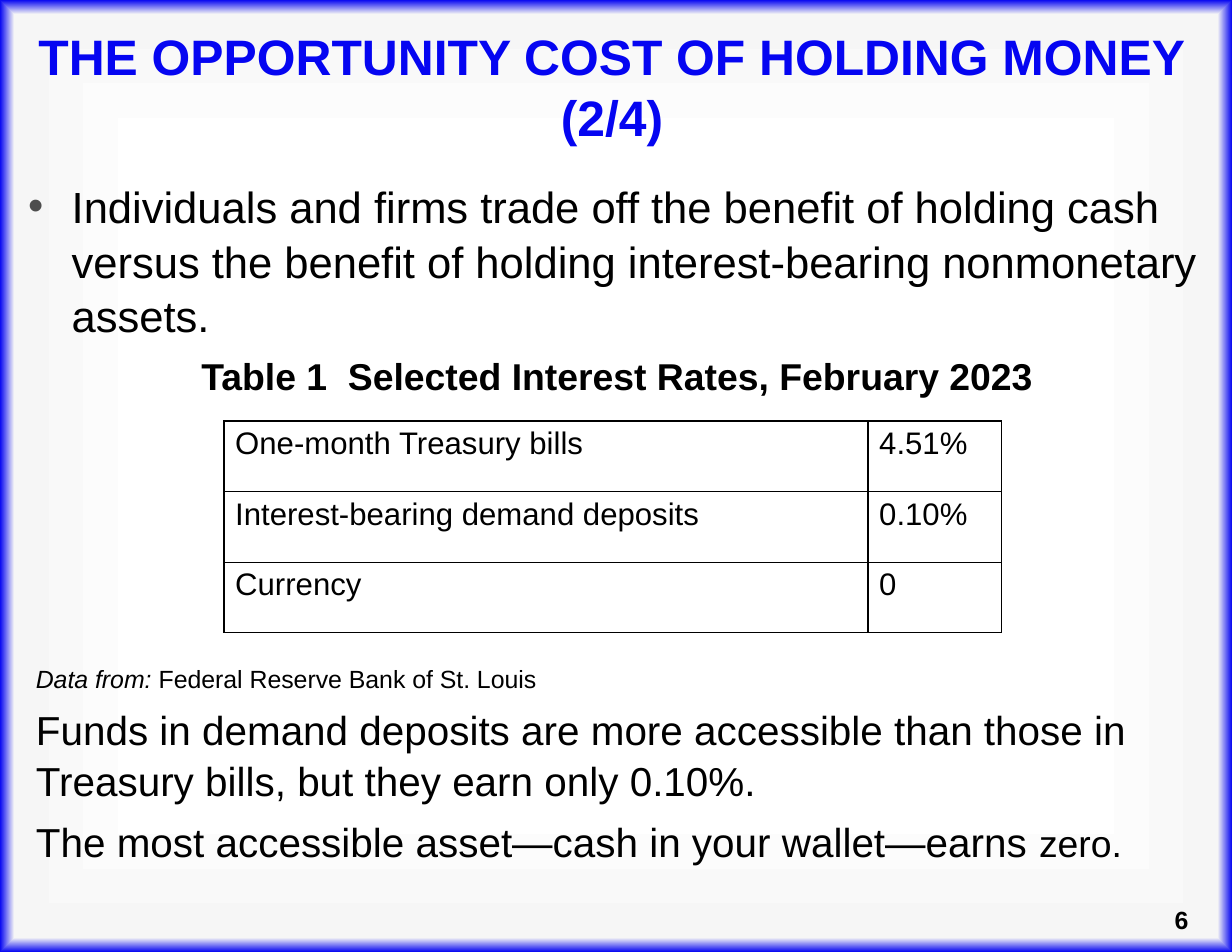
from dataclasses import dataclass

from pptx import Presentation
from pptx.dml.color import RGBColor as RGB
from pptx.enum.text import MSO_ANCHOR as Anchor, MSO_AUTO_SIZE as AutoSize, PP_ALIGN as Align
from pptx.oxml import parse_xml
from pptx.oxml.ns import nsdecls
from pptx.util import Inches, Pt


@dataclass(frozen=True)
class Theme:
    font: str = "Arial"
    accent: str = "0505F1"
    ink: str = "000000"
    bullet: str = "4E4E4E"
    paper: str = "FFFFFF"
    rim: str = "F6F6F6"
    title: int = 32
    lead: int = 28
    body: int = 26
    caption: int = 24
    table: int = 20
    small: int = 16
    space_before: float = 6.2


THEME = Theme()
RATES = [
    ("One-month Treasury bills", "4.51%"),
    ("Interest-bearing demand deposits", "0.10%"),
    ("Currency", "0"),
]
COLUMN_WIDTHS = (5.75, 1.19)
ROW_HEIGHT = 0.63


def paint_background(page):
    """Fade from a white centre to a blue frame at the slide edge."""
    stops = "".join(
        f'<a:gs pos="{share * 1000}"><a:srgbClr val="{color}"/></a:gs>'
        for share, color in ((68, THEME.paper), (97, THEME.rim), (100, THEME.accent))
    )
    page.element.cSld.insert(0, parse_xml(
        f'<p:bg {nsdecls("p", "a")}><p:bgPr><a:gradFill rotWithShape="1">'
        f'<a:gsLst>{stops}</a:gsLst><a:path path="shape">'
        '<a:fillToRect l="50000" t="50000" r="50000" b="50000"/></a:path>'
        '</a:gradFill><a:effectLst/></p:bgPr></p:bg>'
    ))


def place(box, left, top, width, height):
    sides = {"left": left, "top": top, "width": width, "height": height}
    for name, value in sides.items():
        setattr(box, name, Inches(value))


def add_span(para, text, size, color=THEME.ink, **style):
    span = para.add_run()
    span.text = text
    formats = {"name": THEME.font, "size": Pt(size), "bold": False, "italic": False} | style
    for name, value in formats.items():
        setattr(span.font, name, value)
    span.font.color.rgb = RGB.from_string(color)


def set_bullet(para, symbol=None, indent=0):
    properties = para._p.get_or_add_pPr()
    properties.set("marL", str(Inches(indent)))
    properties.set("indent", str(-Inches(indent)))
    if symbol:
        properties.append(parse_xml(
            f'<a:buClr {nsdecls("a")}><a:srgbClr val="{THEME.bullet}"/></a:buClr>'))
        properties.append(parse_xml(f'<a:buChar {nsdecls("a")} char="{symbol}"/>'))
    else:
        properties.append(parse_xml(f'<a:buNone {nsdecls("a")}/>'))


def fill_placeholder(box, bounds, count, line_spacing):
    """Place the box and return its formatted, still empty paragraphs."""
    place(box, *bounds)
    frame = box.text_frame
    frame_formats = {"word_wrap": True, "auto_size": AutoSize.NONE,
                     "vertical_anchor": Anchor.TOP, "margin_top": 0}
    for name, value in frame_formats.items():
        setattr(frame, name, value)
    for _ in range(count - 1):
        frame.add_paragraph()
    for para in frame.paragraphs:
        para.space_before = Pt(THEME.space_before)
        para.line_spacing = line_spacing
        para.alignment = Align.LEFT
    return frame.paragraphs


def add_title(page):
    [para] = fill_placeholder(page.shapes.title, (0, 0.21, 10.93, 1.08), 1, 1.03)
    para.alignment = Align.CENTER
    add_span(para, "THE OPPORTUNITY COST OF HOLDING MONEY (2/4)",
             THEME.title, THEME.accent, bold=True)


def add_lead(page):
    lead, caption = fill_placeholder(page.placeholders[1], (0.15, 1.58, 10.72, 2.21), 2, 1.05)
    set_bullet(lead, "•", 0.39)
    add_span(lead, "Individuals and firms trade off the benefit of holding cash versus "
                   "the benefit of holding interest-bearing nonmonetary assets.", THEME.lead)
    set_bullet(caption)
    caption.alignment = Align.CENTER
    add_span(caption, "Table 1\u00a0 Selected Interest Rates, February 2023".replace("\u00a0", " "),
             THEME.caption, bold=True)


def add_conclusions(page):
    paras = fill_placeholder(page.placeholders[2], (0.22, 5.91, 10.58, 2.09), 3, 1.05)
    for para in paras:
        set_bullet(para)
    credit, deposits, cash = paras
    add_span(credit, "Data from: ", THEME.small, italic=True)
    add_span(credit, "Federal Reserve Bank of St. Louis", THEME.small)
    add_span(deposits, "Funds in demand deposits are more accessible than those in "
                       "Treasury bills, but they earn only 0.10%.", THEME.body)
    add_span(cash, "The most accessible asset—cash in your wallet—earns", THEME.body)
    add_span(cash, " zero.", THEME.caption)


def outline_cell(cell):
    properties = cell._tc.get_or_add_tcPr()
    for position, side in enumerate(("lnL", "lnR", "lnT", "lnB")):
        properties.insert(position, parse_xml(
            f'<a:{side} {nsdecls("a")} w="{Pt(1)}"><a:solidFill>'
            f'<a:srgbClr val="{THEME.ink}"/></a:solidFill></a:{side}>'))


def add_rates_table(page):
    bounds = (2, 3.76, sum(COLUMN_WIDTHS), ROW_HEIGHT * len(RATES))
    table = page.shapes.add_table(len(RATES), len(COLUMN_WIDTHS), *map(Inches, bounds)).table
    table.first_row = table.horz_banding = False
    for column, width in zip(table.columns, COLUMN_WIDTHS):
        column.width = Inches(width)
    for row, values in zip(table.rows, RATES):
        row.height = Inches(ROW_HEIGHT)
        for cell, value in zip(row.cells, values):
            cell.fill.background()
            outline_cell(cell)
            add_span(cell.text_frame.paragraphs[0], value, THEME.table)


def add_page_number(page):
    box = page.shapes.add_textbox(*map(Inches, (10.39, 8.03, 0.49, 0.37)))
    box.text_frame.word_wrap = True
    add_span(box.text_frame.paragraphs[0], "6", THEME.small, bold=True)


def main():
    deck = Presentation()
    deck.slide_width, deck.slide_height = Inches(11), Inches(8.5)
    page = deck.slides.add_slide(deck.slide_layouts.get_by_name("Two Content"))
    paint_background(page)
    add_page_number(page)
    add_title(page)
    add_lead(page)
    add_rates_table(page)
    add_conclusions(page)
    deck.save("out.pptx")


if __name__ == "__main__":
    main()
